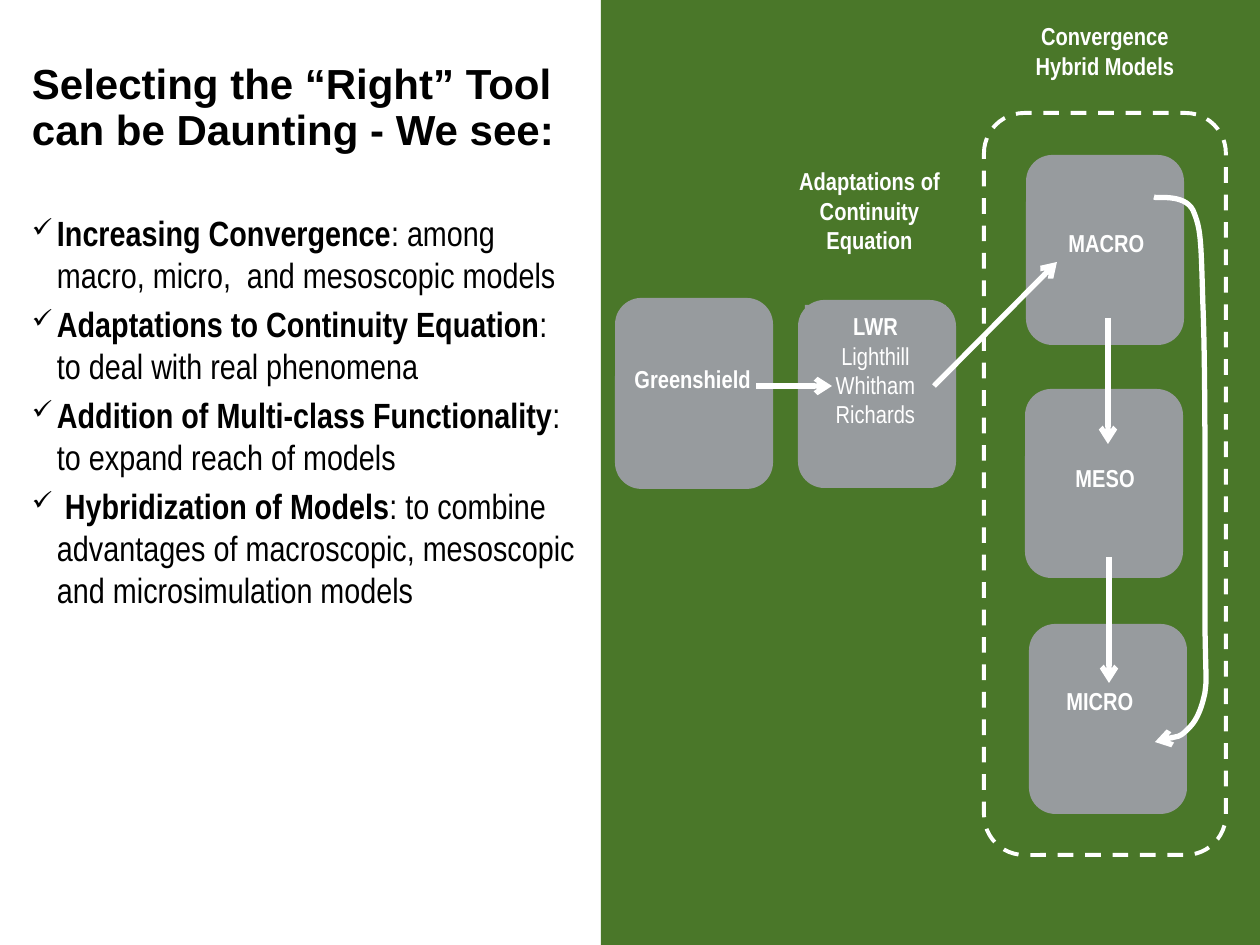
from lxml import etree
from pptx import Presentation
from pptx.dml.color import RGBColor
from pptx.enum.dml import MSO_LINE
from pptx.enum.shapes import MSO_CONNECTOR, MSO_SHAPE
from pptx.enum.text import MSO_ANCHOR, PP_ALIGN
from pptx.oxml.ns import qn
from pptx.util import Emu, Pt

LEFT, CENTER = PP_ALIGN.LEFT, PP_ALIGN.CENTER
RECTANGLE, ROUNDED = MSO_SHAPE.RECTANGLE, MSO_SHAPE.ROUNDED_RECTANGLE
STRAIGHT, DASH, BOTTOM = MSO_CONNECTOR.STRAIGHT, MSO_LINE.DASH, MSO_ANCHOR.BOTTOM
PX = 914400 / 126
COLORS = {"panel": "4A7729", "card": "979B9E", "light": "FFFFFF", "dark": "000000"}
TITLE_FONT, BODY_FONT = "Arial", "Arial Narrow"

TITLE = "Selecting the “Right” Tool can be Daunting - We see:"
# Bold lead, then the lines that follow it
BULLETS = [
    ("Increasing Convergence", [": among ", "macro, micro,  and mesoscopic models"]),
    ("Adaptations to Continuity Equation", [": ", "to deal with real phenomena"]),
    ("Addition of Multi-class Functionality", [": ", "to expand reach of models"]),
    (" Hybridization of Models",
     [": to combine advantages of macroscopic, mesoscopic and microsimulation models"]),
]
# Left, top, width, height
PANEL = (601, 0, 659, 945)
CARDS = [
    (615, 298, 158, 191),
    (798, 300, 158, 188),
    (1026, 155, 158, 190),
    (1025, 389, 158, 189),
    (1029, 624, 158, 190),
]
HYBRID_FRAME = (984, 113, 242, 742)
# Box, text, alignment, fill, number of bold paragraphs
LABELS = [
    ((622, 358, 141, 43), "Greenshield", LEFT, "card", 1),
    ((805, 305, 141, 131), "LWR\nLighthill\nWhitham\nRichards", CENTER, "card", 1),
    ((1056, 222, 110, 43), "MACRO", LEFT, None, 1),
    ((1063, 457, 95, 43), "MESO", LEFT, None, 1),
    ((1054, 680, 100, 43), "MICRO", LEFT, None, 1),
    ((987, 15, 236, 72), "Convergence\nHybrid Models", CENTER, None, 2),
    ((772, 160, 195, 102), "Adaptations of Continuity Equation", CENTER, None, 1),
]
# Start x, start y, end x, end y
ARROWS = [
    (756, 386, 832, 386),
    (934, 386, 1057, 262),
    (1108, 318, 1108, 444),
    (1109, 557, 1109, 683),
]
# Start point, then three Bézier points for each piece
MACRO_TO_MICRO = [
    (1154, 197),
    (1155, 199), (1184, 193), (1193, 210),
    (1201, 229), (1201, 237), (1203, 305),
    (1206, 374), (1205, 558), (1205, 622),
    (1206, 687), (1207, 676), (1205, 693),
    (1201, 711), (1196, 722), (1187, 730),
    (1179, 738), (1160, 740), (1155, 742),
]


def px(*lengths):
    return [Emu(round(length * PX)) for length in lengths]


def color(name):
    return RGBColor.from_string(COLORS[name])


def add_block(slide, kind, box, fill):
    shape = slide.shapes.add_shape(kind, *px(*box))
    shape.shadow.inherit = False
    shape.line.fill.background()
    if fill:
        shape.fill.solid()
        shape.fill.fore_color.rgb = color(fill)
    else:
        shape.fill.background()
    return shape


def add_text_frame(slide, box, side_margin=13):
    frame = slide.shapes.add_textbox(*px(*box)).text_frame
    frame.word_wrap = True
    frame.margin_left, frame.margin_right = px(side_margin, side_margin)
    return frame


def style_run(run, size, font, color_name, bold):
    run.font.size = Pt(size)
    run.font.name = font
    run.font.bold = bold
    run.font.color.rgb = color(color_name)


def add_check_bullet(paragraph):
    properties = paragraph._p.get_or_add_pPr()
    indent = px(25)[0]
    properties.set("marL", str(indent))
    properties.set("indent", str(-indent))
    etree.SubElement(properties, qn("a:buSzPct"), val="75000")
    etree.SubElement(properties, qn("a:buChar"), char="✓")


def style_arrow(shape):
    shape.line.color.rgb = color("light")
    shape.line.width = Pt(3)
    etree.SubElement(shape.line._get_or_add_ln(), qn("a:tailEnd"), type="arrow")


def add_title(slide):
    frame = add_text_frame(slide, (0, 0, 601, 160), 32)
    frame.vertical_anchor = BOTTOM
    frame.text = TITLE
    paragraph = frame.paragraphs[0]
    paragraph.line_spacing = Pt(26)
    style_run(paragraph.runs[0], 24, TITLE_FONT, "dark", True)


def add_bullets(slide):
    frame = add_text_frame(slide, (0, 205, 622, 410), 32)
    for index, (lead, lines) in enumerate(BULLETS):
        paragraph = frame.add_paragraph() if index else frame.paragraphs[0]
        paragraph.space_before = Pt(4)
        add_check_bullet(paragraph)
        for position, text in enumerate([lead, *lines]):
            if position > 1:
                paragraph.add_line_break()
            run = paragraph.add_run()
            run.text = text
            style_run(run, 20, BODY_FONT, "dark", position == 0)


def add_label(slide, box, text, alignment, fill, bold_count):
    frame = add_block(slide, RECTANGLE, box, fill).text_frame
    frame.word_wrap = alignment == CENTER
    frame.vertical_anchor = MSO_ANCHOR.TOP
    frame.text = text
    for index, paragraph in enumerate(frame.paragraphs):
        paragraph.alignment = alignment
        style_run(paragraph.runs[0], 14, BODY_FONT, "light", index < bold_count)


def add_arrow(slide, ends):
    connector = slide.shapes.add_connector(STRAIGHT, *px(*ends))
    etree.SubElement(connector._element.spPr, qn("a:effectLst"))
    style_arrow(connector)


def add_curved_arrow(slide, points):
    """Draw an outline through the points, then join each three into a Bézier piece."""
    builder = slide.shapes.build_freeform(*points[0], scale=PX)
    builder.add_line_segments(points[1:], close=False)
    shape = builder.convert_to_shape()
    shape.shadow.inherit = False
    shape.fill.background()
    segments = list(shape._element.iter(qn("a:lnTo")))
    path = segments[0].getparent()
    for start in range(0, len(segments), 3):
        curve = etree.SubElement(path, qn("a:cubicBezTo"))
        for segment in segments[start:start + 3]:
            curve.append(segment[0])
            path.remove(segment)
    style_arrow(shape)


def main():
    presentation = Presentation()
    presentation.slide_width, presentation.slide_height = px(1260, 945)
    slide = presentation.slides.add_slide(presentation.slide_layouts[6])
    add_title(slide)
    add_bullets(slide)
    add_block(slide, RECTANGLE, PANEL, "panel")
    for card in CARDS:
        add_block(slide, ROUNDED, card, "card")
    for label in LABELS:
        add_label(slide, *label)
    frame = add_block(slide, ROUNDED, HYBRID_FRAME, None)
    frame.line.color.rgb = color("light")
    frame.line.width = Pt(2.25)
    frame.line.dash_style = DASH
    for ends in ARROWS:
        add_arrow(slide, ends)
    add_curved_arrow(slide, MACRO_TO_MICRO)
    presentation.save("out.pptx")


if __name__ == "__main__":
    main()
